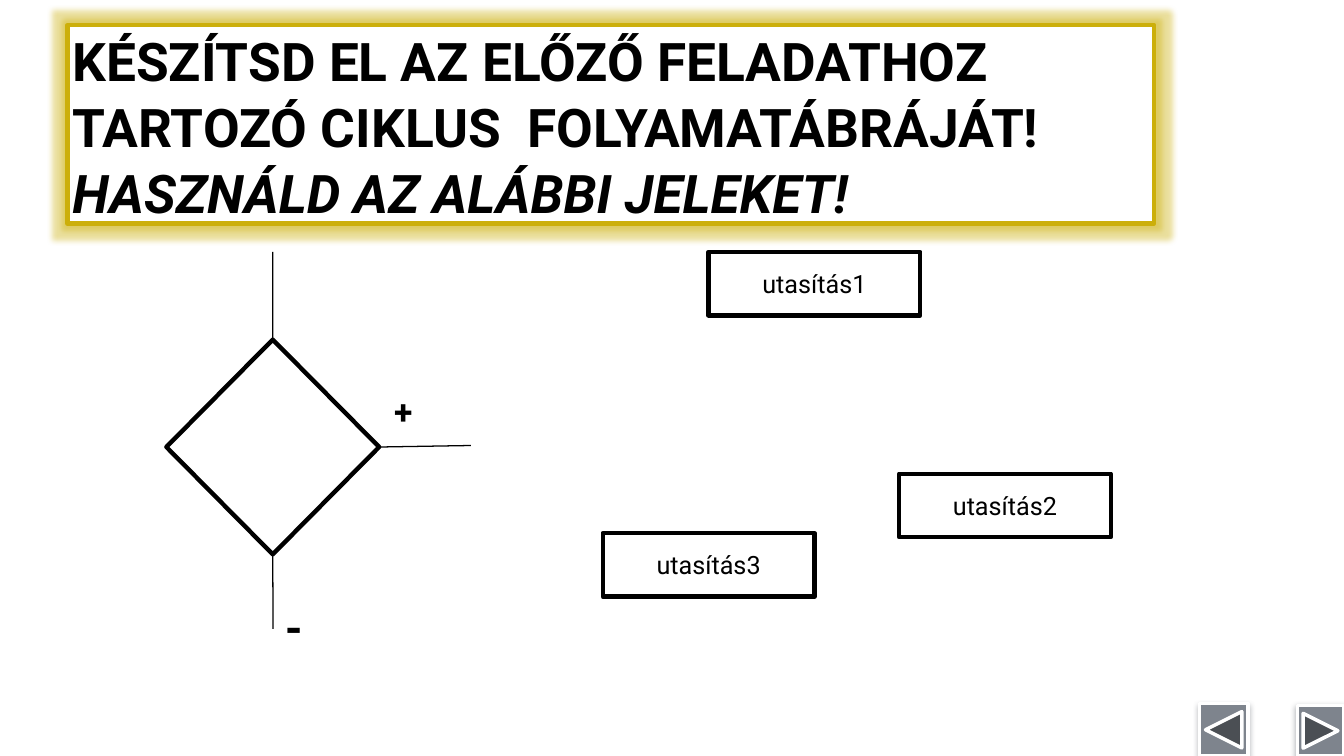
from dataclasses import dataclass

from lxml import etree
from pptx import Presentation, util as u
from pptx.dml.color import RGBColor
from pptx.enum import shapes, text
from pptx.oxml import ns


@dataclass(frozen=True)
class Theme:
    """Colours, type sizes and line widths of the slide."""
    font: str = "Roboto"
    ink: str = "000000"
    paper: str = "FFFFFF"
    gold: str = "CCAF0A"
    button: str = "7E848D"
    shade: str = "484E56"
    title: float = 38
    body: float = 18
    plus: float = 24
    minus: float = 32
    frame: float = 3.15
    flow: float = 0.9
    button_edge: float = 2.5


class FlowSlide:
    """Draws elements placed in percent of the slide's width and height."""

    def __init__(self, deck, theme):
        """Add a blank slide to the deck."""
        self.deck, self.theme = deck, theme
        self.slide = deck.slides.add_slide(deck.slide_layouts[6])

    def place(self, left, top, *size):
        """Turn percentages into slide lengths."""
        spans = (self.deck.slide_width, self.deck.slide_height) * 2
        return [round(span * share / 100) for span, share in zip(spans, (left, top, *size))]

    def effect(self, element, kind=None, colour=None, alpha=0, **settings):
        """Set the effect list of an element, empty unless a kind is named."""
        properties = element.spPr
        for old in properties.findall(ns.qn("a:effectLst")):
            properties.remove(old)
        effects = etree.SubElement(properties, ns.qn("a:effectLst"))
        if kind:
            look = etree.SubElement(effects, ns.qn(kind), settings)
            tint = etree.SubElement(look, ns.qn("a:srgbClr"), val=colour)
            etree.SubElement(tint, ns.qn("a:alpha"), val=str(alpha * 1000))

    def block(self, kind, at, fill, edge, width):
        """Add a filled and outlined preset shape."""
        block = self.slide.shapes.add_shape(kind, *self.place(*at))
        block.shadow.inherit = False
        block.fill.solid()
        block.fill.fore_color.rgb = RGBColor.from_string(fill)
        block.line.color.rgb = RGBColor.from_string(edge)
        block.line.width = u.Pt(width)
        return block

    def label(self, holder, words, size, align, anchor, bold=False):
        """Fill a shape with one styled paragraph and return it."""
        frame = holder.text_frame
        frame.text = words
        frame.word_wrap = True
        frame.vertical_anchor = anchor
        line = frame.paragraphs[0]
        line.alignment = align
        for run in line.runs:
            self.style(run, size, bold)
        return line

    def style(self, run, size, bold):
        """Apply the theme's type to a run."""
        run.font.name = self.theme.font
        run.font.size = u.Pt(size)
        run.font.bold = bold
        run.font.color.rgb = RGBColor.from_string(self.theme.ink)

    def heading(self, at, task, hint):
        """Add the glowing title frame with a task and an italic hint."""
        t = self.theme
        heading = self.block(shapes.MSO_SHAPE.RECTANGLE, at, t.paper, t.gold, t.frame)
        self.effect(heading._element, "a:glow", t.gold, 40, rad=str(u.Pt(8)))
        line = self.label(heading, task, t.title, text.PP_ALIGN.LEFT,
                          text.MSO_ANCHOR.BOTTOM, True)
        line.line_spacing = 1.03
        frame = heading.text_frame
        frame.margin_left = frame.margin_right = u.Inches(0.05)
        frame.margin_top = frame.margin_bottom = 0
        hint_run = line.add_run()
        hint_run.text = hint
        self.style(hint_run, t.title, True)
        hint_run.font.italic = True

    def step(self, at, words):
        """Add an instruction box."""
        t = self.theme
        step = self.block(shapes.MSO_SHAPE.RECTANGLE, at, t.paper, t.ink, t.frame)
        self.label(step, words, t.body, text.PP_ALIGN.CENTER, text.MSO_ANCHOR.MIDDLE)

    def decision(self, at):
        """Add an empty decision diamond."""
        t = self.theme
        return self.block(shapes.MSO_SHAPE.FLOWCHART_DECISION, at, t.paper, t.ink, t.frame)

    def branch(self, decision, side, end):
        """Draw a line from a corner of the decision."""
        tip = self.place(*end)
        branch = self.slide.shapes.add_connector(shapes.MSO_CONNECTOR.STRAIGHT, *tip, *tip)
        branch.begin_connect(decision, side)
        branch.line.color.rgb = RGBColor.from_string(self.theme.ink)
        branch.line.width = u.Pt(self.theme.flow)
        self.effect(branch._element)

    def sign(self, at, mark, size, anchor, indent):
        """Add a bold branch sign."""
        sign = self.slide.shapes.add_textbox(*self.place(*at))
        self.label(sign, mark, size, text.PP_ALIGN.LEFT, anchor, True)
        sign.text_frame.margin_left = u.Inches(indent)

    def button(self, kind, at):
        """Add a navigation button with a soft shadow."""
        t = self.theme
        button = self.block(kind, at, t.button, t.paper, t.button_edge)
        self.effect(button._element, "a:outerShdw", t.shade, 38, blurRad=str(u.Pt(4)),
                    dist=str(u.Pt(2)), dir="5400000", rotWithShape="0")


def main():
    """Build the flowchart exercise slide."""
    deck = Presentation()
    deck.slide_width, deck.slide_height = u.Inches(13.33), u.Inches(7.5)
    theme = Theme()
    page = FlowSlide(deck, theme)

    page.heading((5.02, 3.33, 80.85, 26.27),
                 "KÉSZÍTSD EL AZ ELŐZŐ FELADATHOZ TARTOZÓ CIKLUS  FOLYAMATÁBRÁJÁT! ",
                 "HASZNÁLD AZ ALÁBBI JELEKET!")

    step_size = (15.75, 8.4)
    for words, corner in (("utasítás1", (52.72, 33.33)),
                          ("utasítás3", (44.85, 70.53)),
                          ("utasítás2", (66.9, 62.67))):
        page.step(corner + step_size, words)

    decision = page.decision((12.38, 44.93, 15.83, 28.4))
    for side, end in ((0, (20.29, 33.33)), (2, (20.32, 83.2)), (3, (35.03, 58.93))):
        page.branch(decision, side, end)
    page.sign((28.2, 51.07, 3.83, 6.67), "+", theme.plus, text.MSO_ANCHOR.TOP, 0.15)
    page.sign((20.48, 73.33, 3.83, 13.73), "-", theme.minus, text.MSO_ANCHOR.BOTTOM, 0.1)

    page.button(shapes.MSO_SHAPE.ACTION_BUTTON_BACK_OR_PREVIOUS, (89.25, 93.07, 3.6, 6.93))
    page.button(shapes.MSO_SHAPE.ACTION_BUTTON_FORWARD_OR_NEXT, (96.53, 93.33, 3.45, 6.67))

    deck.save("out.pptx")


if __name__ == "__main__":
    main()
